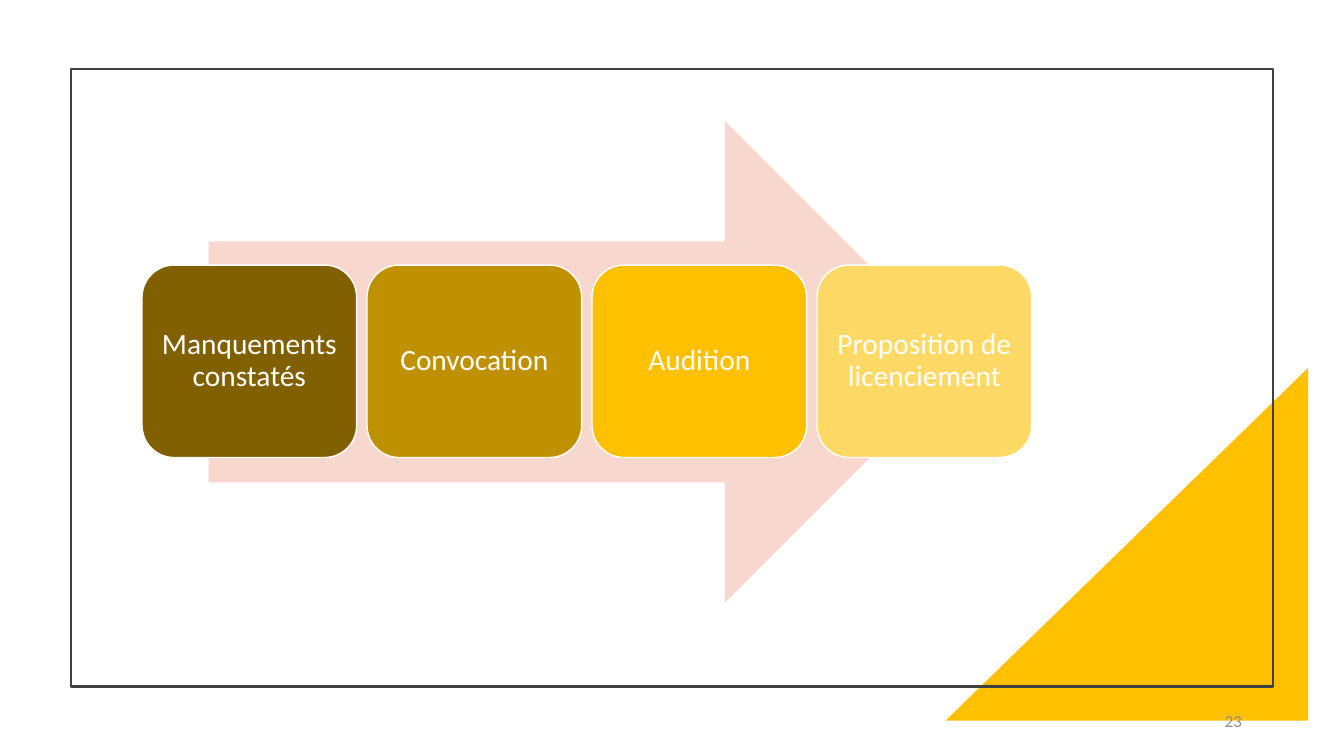
from pptx import Presentation
from pptx.dml.color import RGBColor
from pptx.enum.shapes import MSO_SHAPE
from pptx.enum.text import MSO_ANCHOR, PP_ALIGN
from pptx.util import Cm, Pt

RECT, ROUND = MSO_SHAPE.RECTANGLE, MSO_SHAPE.ROUNDED_RECTANGLE
ARROW, CORNER = MSO_SHAPE.RIGHT_ARROW, MSO_SHAPE.RIGHT_TRIANGLE
MIDDLE = MSO_ANCHOR.MIDDLE
CENTER, RIGHT = PP_ALIGN.CENTER, PP_ALIGN.RIGHT

WHITE = RGBColor(0xFF, 0xFF, 0xFF)
GOLD = RGBColor(0xFF, 0xC0, 0x00)
BROWN = RGBColor(0x80, 0x60, 0x00)
OCHRE = RGBColor(0xBF, 0x90, 0x00)
SAND = RGBColor(0xFF, 0xD9, 0x66)
PINK = RGBColor(0xF8, 0xD7, 0xCE)
DARK = RGBColor(0x40, 0x40, 0x40)
GREY = RGBColor(0x8C, 0x8C, 0x8C)

STEPS = [
    ("Manquements constatés", BROWN),
    ("Convocation", OCHRE),
    ("Audition", GOLD),
    ("Proposition de licenciement", SAND),
]
STEP_LEFT, STEP_TOP, STEP_PITCH = 3.58, 6.68, 5.67
STEP_WIDTH, STEP_HEIGHT = 5.41, 4.85


def set_all(target, values):
    for name, value in values.items():
        setattr(target, name, value)


def add_form(slide, kind, box, fill=None, line=None, weight=1):
    form = slide.shapes.add_shape(kind, *map(Cm, box))
    form.shadow.inherit = False
    if fill is None:
        form.fill.background()
    else:
        form.fill.solid()
        form.fill.fore_color.rgb = fill
    if line is None:
        form.line.fill.background()
    else:
        form.line.color.rgb = line
        form.line.width = Pt(weight)
    return form


def write(shape, text, size, color, align, inset=0.25, spacing=None):
    frame = shape.text_frame
    set_all(frame, {
        "word_wrap": True, "vertical_anchor": MIDDLE,
        "margin_left": Cm(inset), "margin_right": Cm(inset),
        "margin_top": Cm(inset), "margin_bottom": Cm(inset),
    })
    para = frame.paragraphs[0]
    set_all(para, {"alignment": align, "line_spacing": spacing})
    run = para.add_run()
    run.text = text
    set_all(run.font, {"name": "Calibri", "size": Pt(size)})
    run.font.color.rgb = color


def add_step(slide, index, text, fill):
    box = (STEP_LEFT + index * STEP_PITCH, STEP_TOP, STEP_WIDTH, STEP_HEIGHT)
    card = add_form(slide, ROUND, box, fill, WHITE)
    write(card, text, 21, WHITE, CENTER, inset=0.23, spacing=0.9)


def main():
    deck = Presentation()
    set_all(deck, {"slide_width": Cm(33.87), "slide_height": Cm(19.05)})
    slide = deck.slides.add_slide(deck.slide_layouts[6])

    # Corner triangle, mirrored, and frame
    corner = add_form(slide, CORNER, (23.83, 9.27, 9.14, 8.89), GOLD)
    corner.element.spPr.get_or_add_xfrm().set("flipH", "1")
    add_form(slide, RECT, (1.78, 1.73, 30.3, 15.57), line=DARK, weight=1.5)

    # Process arrow and its steps
    add_form(slide, ARROW, (5.26, 3.05, 19.08, 12.14), PINK)
    for index, (text, fill) in enumerate(STEPS):
        add_step(slide, index, text, fill)

    # Slide number
    number = slide.shapes.add_textbox(*map(Cm, (23.93, 17.65, 7.62, 1.02)))
    write(number, "23", 12, GREY, RIGHT)

    deck.save("out.pptx")


if __name__ == "__main__":
    main()
